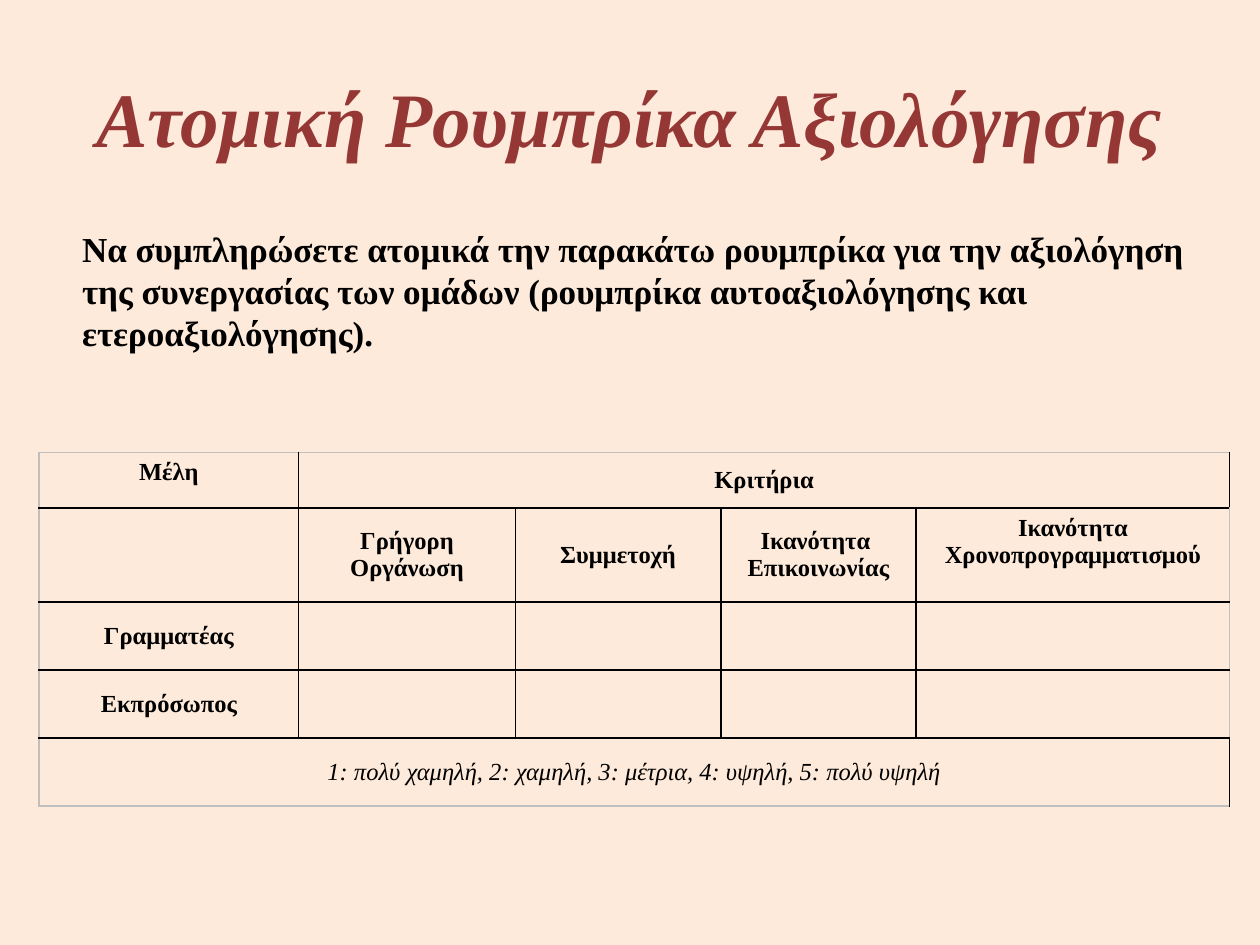
import pptx
import pptx.dml.color
import pptx.enum.text
import pptx.oxml
import pptx.oxml.ns
import pptx.util
from pptx.util import Cm

FONT = "Times New Roman"
COLOURS = {"paper": "FDEADA", "title": "953735", "ink": "000000", "edge": "BFBFBF"}
COLUMNS = [5.23, 4.37, 4.14, 3.94, 6.32]
ROWS = [1.12, 1.9, 1.37, 1.37, 1.37]
MERGES = [(0, 1, 4), (4, 0, 4)]
TOP_CELLS = [(0, 0), (1, 4)]
SCALE = "1: πολύ χαμηλή, 2: χαμηλή, 3: μέτρια, 4: υψηλή, 5: πολύ υψηλή"
CELLS = {
    (0, 0): ["Μέλη"],
    (0, 1): ["Κριτήρια"],
    (1, 1): ["Γρήγορη Οργάνωση"],
    (1, 2): ["Συμμετοχή"],
    (1, 3): ["Ικανότητα ", "Επικοινωνίας"],
    (1, 4): ["Ικανότητα Χρονοπρογραμματισμού"],
    (2, 0): ["Γραμματέας"],
    (3, 0): ["Εκπρόσωπος"],
    (4, 0): [SCALE],
}
CENTRE = pptx.enum.text.PP_ALIGN.CENTER
ANCHOR = pptx.enum.text.MSO_ANCHOR


def colour(name):
    """Return the named colour."""
    return pptx.dml.color.RGBColor.from_string(COLOURS[name])


def add_span(para, text, size, ink="ink", bold=True, italic=False):
    """Append one formatted run to a paragraph."""
    span = para.add_run()
    span.text = text
    span.font.name = FONT
    span.font.size = pptx.util.Pt(size)
    span.font.bold = bold
    span.font.italic = italic
    span.font.color.rgb = colour(ink)


def place(shape, box):
    """Move a shape to a box of left, top, width and height."""
    shape.left, shape.top, shape.width, shape.height = box


def fill_title(page, box):
    """Place and write the title."""
    title = page.shapes.title
    place(title, box)
    title.text_frame.vertical_anchor = ANCHOR.MIDDLE
    para = title.text_frame.paragraphs[0]
    para.alignment = CENTRE
    add_span(para, "Ατομική Ρουμπρίκα Αξιολόγησης", 44, "title", italic=True)


def fill_body(page, box):
    """Place and write the instructions without a bullet."""
    body = page.placeholders[1]
    place(body, box)
    para = body.text_frame.paragraphs[0]
    settings = para._p.get_or_add_pPr()
    settings.set("marL", "0")
    settings.set("indent", "0")
    pptx.oxml.ns.qn("a:buNone")
    settings.append(pptx.oxml.parse_xml(f'<a:buNone {pptx.oxml.ns.nsdecls("a")}/>'))
    add_span(para, "Να συμπληρώσετε ατομικά την παρακάτω ρουμπρίκα για την αξιολόγηση "
             "της συνεργασίας των ομάδων (ρουμπρίκα αυτοαξιολόγησης και "
             "ετεροαξιολόγησης).", 20)


def draw_borders(cell, row, column):
    """Give a cell grey outer edges and black inner ones."""
    outer = {"L": column == 0, "R": column == len(COLUMNS) - 1,
             "T": row == 0, "B": row == len(ROWS) - 1}
    settings = cell._tc.get_or_add_tcPr()
    for index, (side, is_outer) in enumerate(outer.items()):
        ink = COLOURS["edge" if is_outer else "ink"]
        settings.insert(index, pptx.oxml.parse_xml(
            f'<a:ln{side} {pptx.oxml.ns.nsdecls("a")} w="12700"><a:solidFill>'
            f'<a:srgbClr val="{ink}"/></a:solidFill></a:ln{side}>'))


def fill_cell(cell, row, column):
    """Format one cell and write its lines."""
    cell.fill.background()
    draw_borders(cell, row, column)
    top = (row, column) in TOP_CELLS
    cell.vertical_anchor = ANCHOR.TOP if top else ANCHOR.MIDDLE
    is_scale = row == len(ROWS) - 1
    frame = cell.text_frame
    for index, text in enumerate(CELLS.get((row, column), [])):
        para = frame.add_paragraph() if index else frame.paragraphs[0]
        para.alignment = CENTRE
        add_span(para, text, 14, bold=not is_scale, italic=is_scale)


def add_rubric(page, box):
    """Add the assessment table."""
    table = page.shapes.add_table(len(ROWS), len(COLUMNS), *box).table
    table.first_row = table.horz_banding = False
    for column, width in zip(table.columns, COLUMNS):
        column.width = Cm(width)
    for row, height in zip(table.rows, ROWS):
        row.height = Cm(height)
    for row, first, last in MERGES:
        table.cell(row, first).merge(table.cell(row, last))
    for row in range(len(ROWS)):
        for column in range(len(COLUMNS)):
            fill_cell(table.cell(row, column), row, column)


def main():
    """Build and save the deck."""
    deck = pptx.Presentation()
    deck.slide_width, deck.slide_height = Cm(25.4), Cm(19.05)
    page = deck.slides.add_slide(deck.slide_layouts[1])
    page.background.fill.solid()
    page.background.fill.fore_color.rgb = colour("paper")
    fill_title(page, (Cm(1.27), Cm(0.76), Cm(22.86), Cm(3.18)))
    fill_body(page, (Cm(1.4), Cm(4.45), Cm(22.81), Cm(12.57)))
    add_rubric(page, (Cm(0.79), Cm(9.12), Cm(sum(COLUMNS)), Cm(sum(ROWS))))
    deck.save("out.pptx")


if __name__ == "__main__":
    main()
